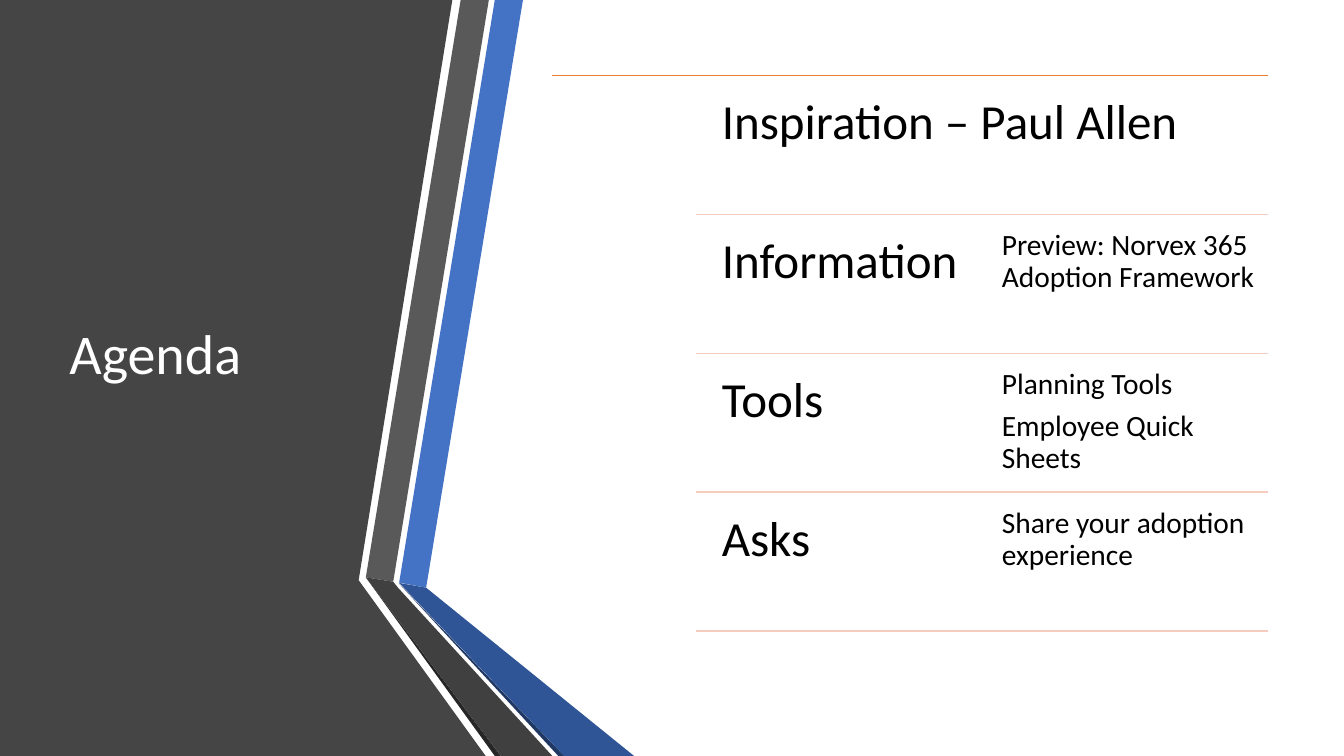
from pptx import Presentation
from pptx.dml.color import RGBColor
from pptx.enum.shapes import MSO_CONNECTOR
from pptx.enum.text import MSO_ANCHOR, MSO_AUTO_SIZE, PP_ALIGN
from pptx.oxml.ns import qn
from pptx.util import Cm, Pt
from lxml.etree import SubElement

WHITE = RGBColor(0xFF, 0xFF, 0xFF)
BLACK = RGBColor(0x00, 0x00, 0x00)
PANEL = RGBColor(0x45, 0x45, 0x45)
BLUE = RGBColor(0x44, 0x72, 0xC4)
DEEP = RGBColor(0x2F, 0x55, 0x97)
NAVY = RGBColor(0x20, 0x38, 0x64)
GREY = RGBColor(0x59, 0x59, 0x59)
DARK = RGBColor(0x40, 0x40, 0x40)
COAL = RGBColor(0x26, 0x26, 0x26)
ORANGE = RGBColor(0xED, 0x7D, 0x31)
PEACH = RGBColor(0xF6, 0xCC, 0xBE)

WIDE, HIGH = 33.87, 19.05

# Outlines of the folded ribbons, in cm from the corner of the band
BANDS = [
    (PANEL, [(0, 0), (11.4, 0), (9.04, 14.62), (12.24, HIGH), (0, HIGH)]),
    (BLUE, [(10.06, 14.68), (10.74, 14.81), (13.18, 0), (12.47, 0)]),
    (GREY, [(12.32, 0), (11.61, 0), (9.22, 14.55), (9.91, 14.66)]),
    (COAL, [(9.22, 14.55), (12.47, HIGH), (12.62, HIGH)]),
    (NAVY, [(10.06, 14.71), (14.07, HIGH), (14.22, HIGH)]),
    (DEEP, [(10.06, 14.69), (14.22, HIGH), (15.98, HIGH), (10.74, 14.81)]),
    (DARK, [(9.22, 14.55), (12.62, HIGH), (13.92, HIGH), (10.03, 14.81),
            (9.91, 14.66)]),
]

AGENDA = [
    ("Inspiration – Paul Allen", []),
    ("Information", ["Preview: Norvex 365 Adoption Framework"]),
    ("Tools", ["Planning Tools", "Employee Quick Sheets"]),
    ("Asks", ["Share your adoption experience"]),
]


def write(shape, lines, size, color=BLACK, inset=0.25, after=0,
          anchor=MSO_ANCHOR.TOP):
    frame = shape.text_frame
    frame.word_wrap = True
    frame.auto_size = MSO_AUTO_SIZE.NONE
    frame.vertical_anchor = anchor
    frame.margin_left = frame.margin_right = Cm(inset)
    frame.margin_top = frame.margin_bottom = Cm(inset)
    frame.text = "\n".join(lines)
    for para in frame.paragraphs:
        para.alignment = PP_ALIGN.LEFT
        para.line_spacing = 0.9
        para.space_before = Pt(0)
        para.space_after = Pt(after)
        para.font.name = "Calibri"
        para.font.size = Pt(size)
        para.font.color.rgb = color


def rule(slide, left, right, y, color):
    line = slide.shapes.add_connector(
        MSO_CONNECTOR.STRAIGHT, Cm(left), Cm(y), Cm(right), Cm(y))
    line.line.color.rgb = color
    line.line.width = Pt(1)
    SubElement(line.element.spPr, qn("a:effectLst"))


def ribbons(slide, left, top):
    for color, points in BANDS:
        spots = [(Cm(left + x), Cm(top + y)) for x, y in points]
        pen = slide.shapes.build_freeform(*spots[0])
        pen.add_line_segments(spots[1:])
        band = pen.convert_to_shape()
        band.shadow.inherit = False
        band.fill.solid()
        band.fill.fore_color.rgb = color
        band.line.fill.background()


def heading(slide, left, top, width, height):
    title = slide.shapes.title
    title.left, title.top = Cm(left), Cm(top)
    title.width, title.height = Cm(width), Cm(height)
    write(title, ["Agenda"], 40, color=WHITE, after=6,
          anchor=MSO_ANCHOR.MIDDLE)
    # Bring the title in front of the panel
    title.element.getparent().append(title.element)


def agenda(slide, left, top, width, height):
    step = height / len(AGENDA)
    right = left + width
    rule(slide, left, right, top, ORANGE)
    for row, (topic, notes) in enumerate(AGENDA):
        y = top + row * step
        # Topic, as wide as the row when it has no notes
        span = 6.93 if notes else 13.69
        cell = slide.shapes.add_textbox(
            Cm(left + 3.89), Cm(y + 0.17), Cm(span), Cm(step - 0.17))
        write(cell, [topic], 35, inset=0.38, after=12.25)
        if notes:
            cell = slide.shapes.add_textbox(
                Cm(right - 6.93), Cm(y + 0.17), Cm(6.93), Cm(step - 0.17))
            write(cell, notes, 21, inset=0.23, after=7.35)
        rule(slide, left + 3.61, right, y + step, PEACH)


def main():
    deck = Presentation()
    deck.slide_width, deck.slide_height = Cm(WIDE), Cm(HIGH)
    slide = deck.slides.add_slide(deck.slide_layouts[5])
    ribbons(slide, 0, 0)
    heading(slide, 1.5, 1.9, 7.72, 14.17)
    agenda(slide, 13.92, 1.9, 18.03, 14)
    deck.save("out.pptx")


if __name__ == "__main__":
    main()
